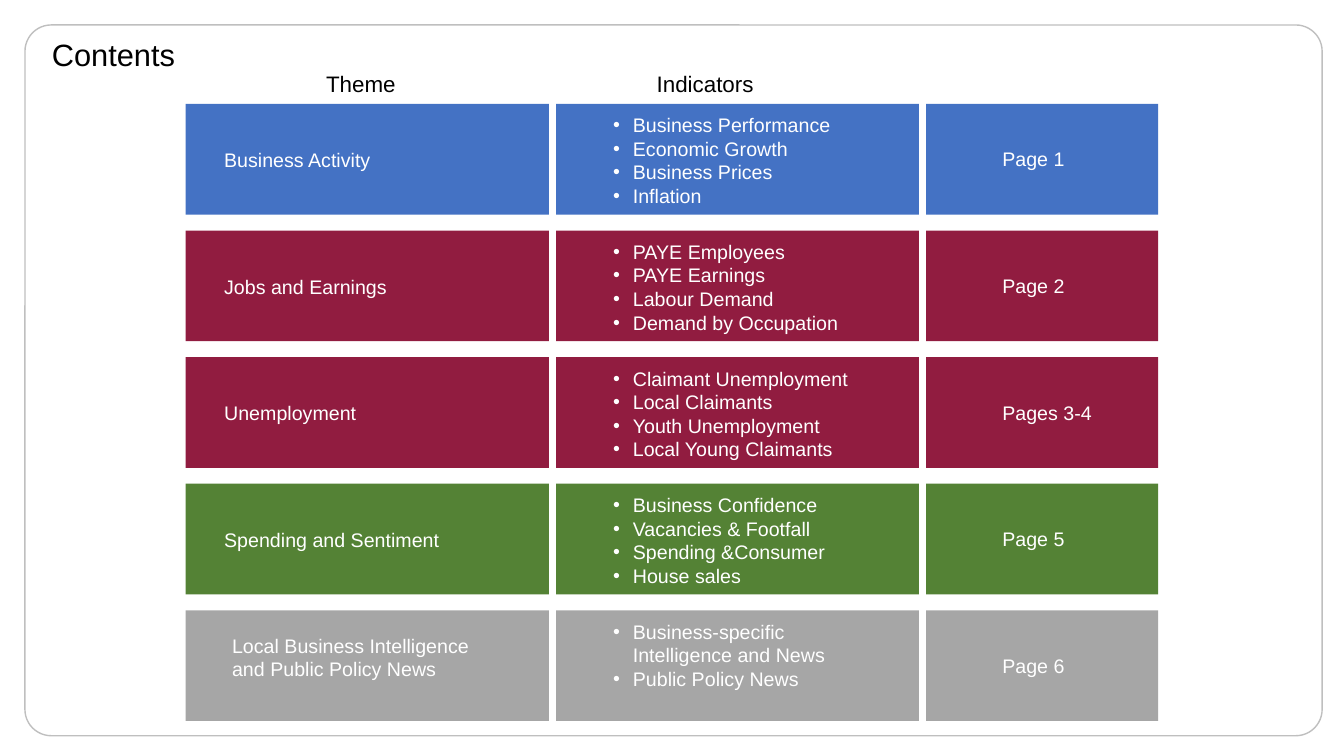
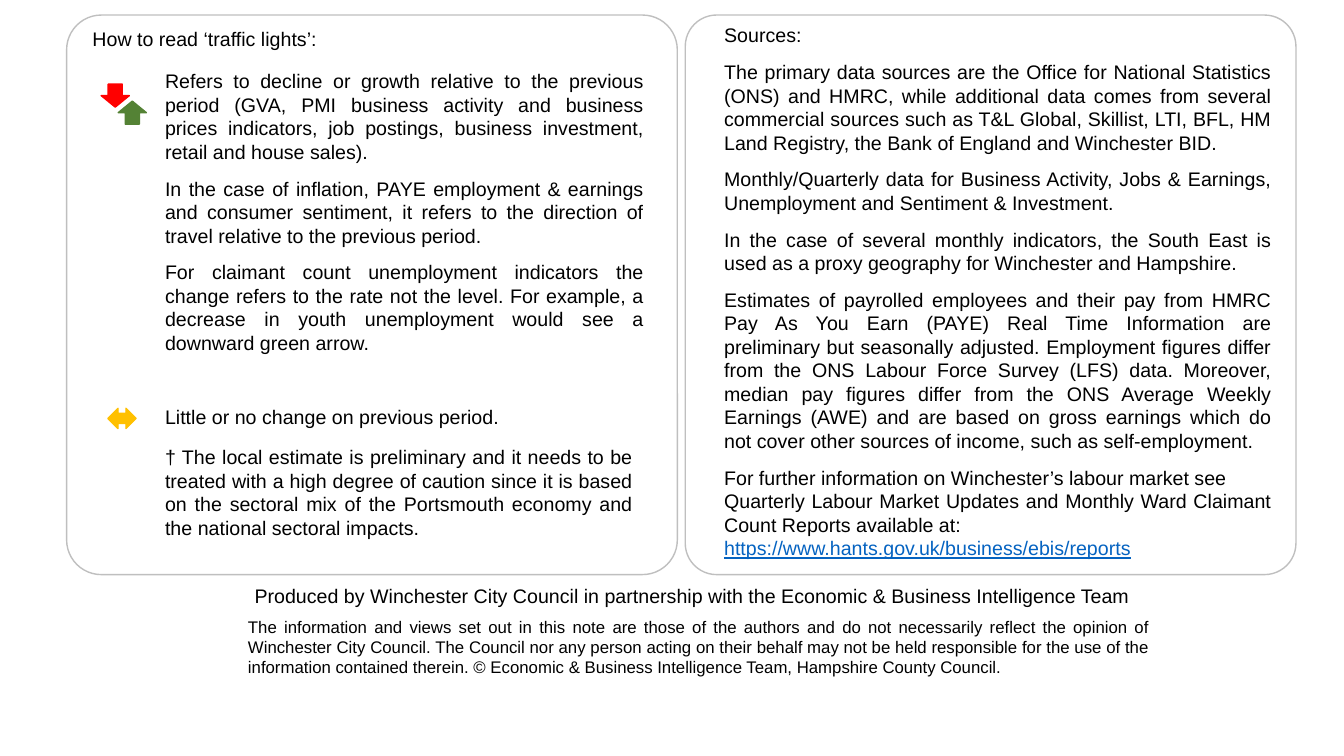
from lxml import etree
from pptx import Presentation
from pptx.dml.color import RGBColor
from pptx.enum.shapes import MSO_CONNECTOR, MSO_SHAPE
from pptx.enum.text import PP_ALIGN
from pptx.oxml.ns import qn
from pptx.util import Cm, Pt

LEFT, CENTER, FULL = PP_ALIGN.LEFT, PP_ALIGN.CENTER, PP_ALIGN.JUSTIFY
RECT, ROUND = MSO_SHAPE.RECTANGLE, MSO_SHAPE.ROUNDED_RECTANGLE
DOWN, UP = MSO_SHAPE.DOWN_ARROW, MSO_SHAPE.UP_ARROW
FLAT = MSO_SHAPE.LEFT_RIGHT_ARROW
STRAIGHT = MSO_CONNECTOR.STRAIGHT

FONT = "Arial"
HEX = {
    "black": "000000", "white": "FFFFFF", "frame": "BFBFBF", "link": "0563C1",
    "blue": "4472C4", "wine": "911C40", "green": "548235", "grey": "A6A6A6",
    "red": "FF0000", "amber": "FFC000",
}

# Theme, indicators, page, colour, shift of the theme text
ROWS = [
    ("Business Activity",
     ["Business Performance", "Economic Growth", "Business Prices", "Inflation"],
     "Page 1", "blue", (0, 0)),
    ("Jobs and Earnings",
     ["PAYE Employees", "PAYE Earnings", "Labour Demand", "Demand by Occupation"],
     "Page 2", "wine", (0, 0)),
    ("Unemployment",
     ["Claimant Unemployment", "Local Claimants", "Youth Unemployment",
      "Local Young Claimants"],
     "Pages 3-4", "wine", (0, 0)),
    ("Spending and Sentiment",
     ["Business Confidence", "Vacancies & Footfall", "Spending &Consumer",
      "House sales"],
     "Page 5", "green", (0, 0)),
    ("Local Business Intelligence and Public Policy News",
     ["Business-specific Intelligence and News", "Public Policy News"],
     "Page 6", "grey", (0.2, -0.53)),
]

LIGHTS = [
    "Refers to decline or growth relative to the previous period (GVA, PMI "
    "business activity and business prices indicators, job postings, business "
    "investment, retail and house sales).",
    "In the case of inflation, PAYE employment & earnings and consumer "
    "sentiment, it refers to the direction of travel relative to the previous "
    "period.",
    "For claimant count unemployment indicators the change refers to the rate "
    "not the level. For example, a decrease in youth unemployment would see a "
    "downward green arrow.",
]
STEADY = [
    "Little or no change on previous period.",
    "† The local estimate is preliminary and it needs to be treated with a high "
    "degree of caution since it is based on the sectoral mix of the Portsmouth "
    "economy and the national sectoral impacts.",
]
SOURCES = [
    "Sources:",
    "The primary data sources are the Office for National Statistics (ONS) and "
    "HMRC, while additional data comes from several commercial sources such as "
    "T&L Global, Skillist, LTI, BFL, HM Land Registry, the Bank of England and "
    "Winchester BID.",
    "Monthly/Quarterly data for Business Activity, Jobs & Earnings, "
    "Unemployment and Sentiment & Investment.",
    "In the case of several monthly indicators, the South East is used as a "
    "proxy geography for Winchester and Hampshire.",
    "Estimates of payrolled employees and their pay from HMRC Pay As You Earn "
    "(PAYE) Real Time Information are preliminary but seasonally adjusted. "
    "Employment figures differ from the ONS Labour Force Survey (LFS) data. "
    "Moreover, median pay figures differ from the ONS Average Weekly Earnings "
    "(AWE) and are based on gross earnings which do not cover other sources of "
    "income, such as self-employment.",
    "For further information on Winchester’s labour market see",
    "Quarterly Labour Market Updates and Monthly Ward Claimant Count Reports "
    "available at:",
    "https://www.hants.gov.uk/business/ebis/reports",
]
MAKER = ("Produced by Winchester City Council in partnership with the Economic "
         "& Business Intelligence Team")
LEGAL = ("The information and views set out in this note are those of the "
         "authors and do not necessarily reflect the opinion of Winchester City "
         "Council. The Council nor any person acting on their behalf may not be "
         "held responsible for the use of the information contained therein. "
         "© Economic & Business Intelligence Team, Hampshire County Council.")


def rgb(name):
    return RGBColor.from_string(HEX[name])


def shape(slide, kind, box, fill=None, line=None):
    item = slide.shapes.add_shape(kind, *map(Cm, box))
    item.shadow.inherit = False
    if fill:
        item.fill.solid()
        item.fill.fore_color.rgb = rgb(fill)
    else:
        item.fill.background()
    if line:
        item.line.color.rgb = rgb(line)
        item.line.width = Pt(1)
    else:
        item.line.fill.background()
    return item


def frame(slide, box, curve):
    shape(slide, ROUND, box, line="frame").adjustments[0] = curve


def bullet(para):
    props = para._p.get_or_add_pPr()
    props.set("marL", str(Cm(0.5)))
    props.set("indent", str(-Cm(0.5)))
    etree.SubElement(props, qn("a:buFont")).set("typeface", FONT)
    etree.SubElement(props, qn("a:buChar")).set("char", "•")


def text(slide, box, lines, size=14, color="black", align=LEFT, gap=0,
         tight=0, dots=False):
    """Write lines as paragraphs; the last `tight` ones get no gap."""
    body = slide.shapes.add_textbox(*map(Cm, box)).text_frame
    body.word_wrap = True
    body.text = "\n".join(lines)
    for i, para in enumerate(body.paragraphs):
        para.alignment = align
        if dots:
            bullet(para)
        if gap and 0 < i < len(lines) - tight:
            para.space_before = Pt(gap)
        for run in para.runs:
            run.font.name, run.font.size = FONT, Pt(size)
            run.font.color.rgb = rgb(color)
    return body


def rule(slide, x, top, end):
    line = slide.shapes.add_connector(STRAIGHT, Cm(x), Cm(top), Cm(x), Cm(end))
    line.line.color.rgb = rgb("white")
    line.line.width = Pt(4.5)
    etree.SubElement(line._element.spPr, qn("a:effectLst"))


def band(slide, box, row):
    x, y, _, _ = box
    theme, items, page, color, (dx, dy) = row
    shape(slide, RECT, box, fill=color)
    text(slide, (x + 0.72 + dx, y + 0.99 + dy, 6.76, 0.86), [theme],
         color="white")
    text(slide, (x + 10.52, y + 0.11, 6.48, 2.64), items, color="white",
         dots=True)
    text(slide, (x + 20.33, y + 0.97, 2.97, 0.86), [page], color="white")


def contents(slide, box):
    x, y, _, _ = box
    frame(slide, box, 0.037)
    text(slide, (x + 0.43, y + 0.15, 5, 1.2), ["Contents"], size=22)

    # Column heads and bands
    left, top, tall, step = x + 4.05, y + 1.99, 2.79, 3.19
    for dx, head in ((3.29, "Theme"), (11.62, "Indicators")):
        text(slide, (left + dx, top - 0.97, 5.64, 0.94), [head], size=16)
    for i, row in enumerate(ROWS):
        band(slide, (left, top + i * step, 24.51, tall), row)

    # White column gaps
    end = top + (len(ROWS) - 1) * step + tall
    for dx in (9.24, 18.57):
        rule(slide, left + dx, top - 0.15, end + 0.05)


def lights(slide, box):
    x, y, _, _ = box
    frame(slide, box, 0.062)
    text(slide, (x + 0.4, y + 0.18, 8, 0.86), ["How to read ‘traffic lights’:"])
    text(slide, (x + 2.23, y + 1.24, 12.57, 7.52), LIGHTS, align=FULL, gap=9.4)
    text(slide, (x + 2.23, y + 9.7, 12.29, 3.68), STEADY, align=FULL, gap=12)
    for kind, dx, dy, tall, color in (
            (DOWN, 0.87, 1.74, 0.58, "red"),
            (UP, 1.3, 2.17, 0.58, "green"),
            (FLAT, 1.04, 9.91, 0.51, "amber")):
        shape(slide, kind, (x + dx, y + dy, 0.71, tall), color, color)


def sources(slide, box):
    x, y, _, _ = box
    frame(slide, box, 0.056)
    body = text(slide, (x + 0.73, y + 0.08, 14.3, 14.2), SOURCES, align=FULL,
                gap=9.4, tight=2)
    link = body.paragraphs[-1].runs[0].font
    link.color.rgb, link.underline = rgb("link"), True


def footer(slide, box):
    x, y, wide, _ = box
    text(slide, (x, y, wide, 0.86), [MAKER], align=CENTER)
    text(slide, (x + 3.89, y + 0.84, 23.24, 1.8), [LEGAL], size=12, align=FULL)


def main():
    deck = Presentation()
    deck.slide_width, deck.slide_height = Cm(33.87), Cm(19.05)
    blank = deck.slide_layouts[6]

    contents(deck.slides.add_slide(blank), (0.63, 0.63, 32.69, 17.91))

    notes = deck.slides.add_slide(blank)
    lights(notes, (1.68, 0.38, 15.39, 14.1))
    sources(notes, (17.27, 0.38, 15.39, 14.1))
    footer(notes, (2.11, 14.58, 30.68, 2.64))

    deck.save("out.pptx")


if __name__ == "__main__":
    main()
